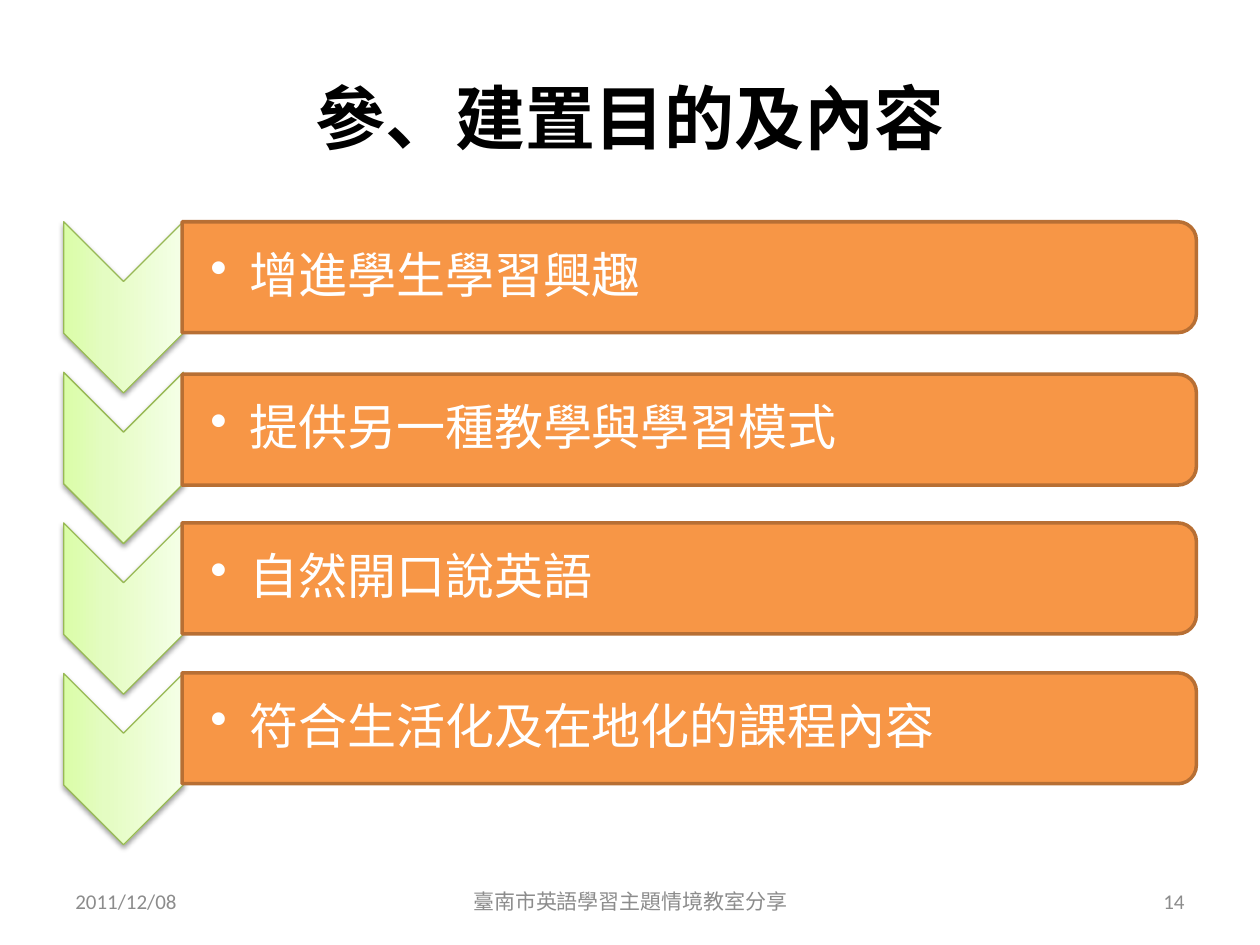
from lxml.etree import SubElement
from pptx import Presentation
from pptx.dml.color import RGBColor
from pptx.enum.shapes import MSO_SHAPE
from pptx.enum.text import MSO_ANCHOR, PP_ALIGN
from pptx.oxml import parse_xml
from pptx.oxml.ns import qn
from pptx.util import Inches, Pt

NS = 'xmlns:a="http://schemas.openxmlformats.org/drawingml/2006/main"'
CJK = "Noto Sans CJK SC"
GOALS = [
    ("增進學生學習興趣", 2.2),
    ("提供另一種教學與學習模式", 3.41),
    ("自然開口說英語", 4.59),
    ("符合生活化及在地化的課程內容", 5.78),
]
STOPS = [(0, "DAFDA7"), (35, "E4FCC2"), (100, "F5FFE7")]
FOOTER = [
    ("2011/12/08", 0.5, 2.33, PP_ALIGN.LEFT),
    ("臺南市英語學習主題情境教室分享", 3.42, 3.17, PP_ALIGN.CENTER),
    ("14", 7.17, 2.33, PP_ALIGN.RIGHT),
]


def color(code):
    return RGBColor.from_string(code)


def apply(target, formats):
    for name, value in formats.items():
        setattr(target, name, value)


def add_text(slide, words, box, size, tint, font=CJK, bold=False,
             align=PP_ALIGN.LEFT):
    frame = slide.shapes.add_textbox(*map(Inches, box)).text_frame
    apply(frame, {"word_wrap": True, "vertical_anchor": MSO_ANCHOR.MIDDLE})
    line = frame.paragraphs[0]
    line.alignment = align
    run = line.add_run()
    run.text = words
    apply(run.font, {"name": font, "size": Pt(size), "bold": bold})
    run.font.color.rgb = color(tint)
    SubElement(run.font._element, qn("a:ea")).set("typeface", CJK)
    return frame


def add_turned(slide, kind, mid_x, mid_y, width, height, edge, weight):
    shape = slide.shapes.add_shape(
        kind, Inches(mid_x - width / 2), Inches(mid_y - height / 2),
        Inches(width), Inches(height))
    shape.rotation = 90
    shape.shadow.inherit = False
    shape.line.color.rgb = color(edge)
    shape.line.width = Pt(weight)
    return shape


def add_arrow(slide, mid_y):
    arrow = add_turned(slide, MSO_SHAPE.CHEVRON, 0.98, mid_y, 1.36, 0.95,
                       "98B955", 0.75)
    stops = "".join(
        f'<a:gs pos="{spot * 1000}"><a:srgbClr val="{tint}"/></a:gs>'
        for spot, tint in STOPS)
    props = arrow._element.spPr
    props.find(qn("a:prstGeom")).addnext(parse_xml(
        f'<a:gradFill {NS} rotWithShape="1"><a:gsLst>{stops}</a:gsLst>'
        '<a:lin ang="16200000" scaled="1"/></a:gradFill>'))
    props.find(qn("a:effectLst")).append(parse_xml(
        f'<a:outerShdw {NS} blurRad="39370" dist="20320" dir="5400000" '
        'rotWithShape="0"><a:srgbClr val="000000"><a:alpha val="38000"/>'
        '</a:srgbClr></a:outerShdw>'))


def add_goal(slide, words, mid_y):
    bar = add_turned(slide, MSO_SHAPE.ROUND_2_SAME_RECTANGLE, 5.47, mid_y,
                     0.88, 8.05, "B76F34", 2)
    bar.fill.solid()
    bar.fill.fore_color.rgb = color("F79646")
    frame = add_text(slide, words, (1.45, mid_y - 0.4, 8.01, 0.8), 28, "FFFFFF")
    apply(frame, {"margin_left": Inches(0.22), "margin_right": Inches(0.02),
                  "margin_top": Inches(0.02), "margin_bottom": Inches(0.02)})
    line = frame.paragraphs[0]
    apply(line, {"line_spacing": 0.9, "space_after": Pt(4)})
    props = line._p.get_or_add_pPr()
    props.set("marL", str(Inches(0.31)))
    props.set("indent", str(Inches(-0.31)))
    SubElement(props, qn("a:buChar")).set("char", "•")


def main():
    deck = Presentation()
    apply(deck, {"slide_width": Inches(10), "slide_height": Inches(7.5)})
    slide = deck.slides.add_slide(deck.slide_layouts[6])
    add_text(slide, "參、建置目的及內容", (0.5, 0.3, 9, 1.25), 40, "000000",
             bold=True, align=PP_ALIGN.CENTER)
    for row, (words, mid_y) in enumerate(GOALS):
        add_arrow(slide, 2.44 + row * 1.195)
        add_goal(slide, words, mid_y)
    for words, left, width, align in FOOTER:
        add_text(slide, words, (left, 6.95, width, 0.4), 12, "8C8C8C",
                 font="Calibri", align=align)
    deck.save("out.pptx")


if __name__ == "__main__":
    main()
